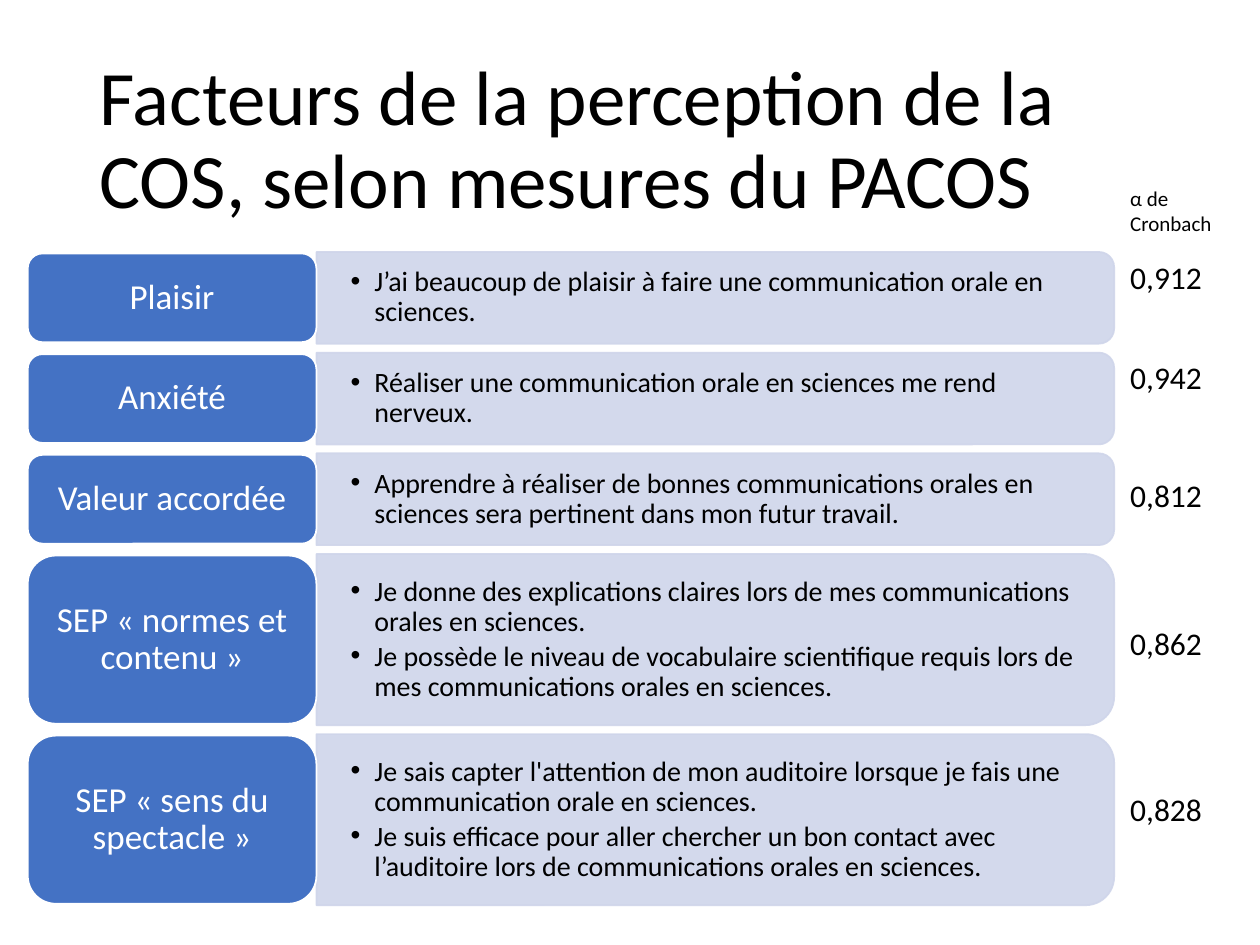
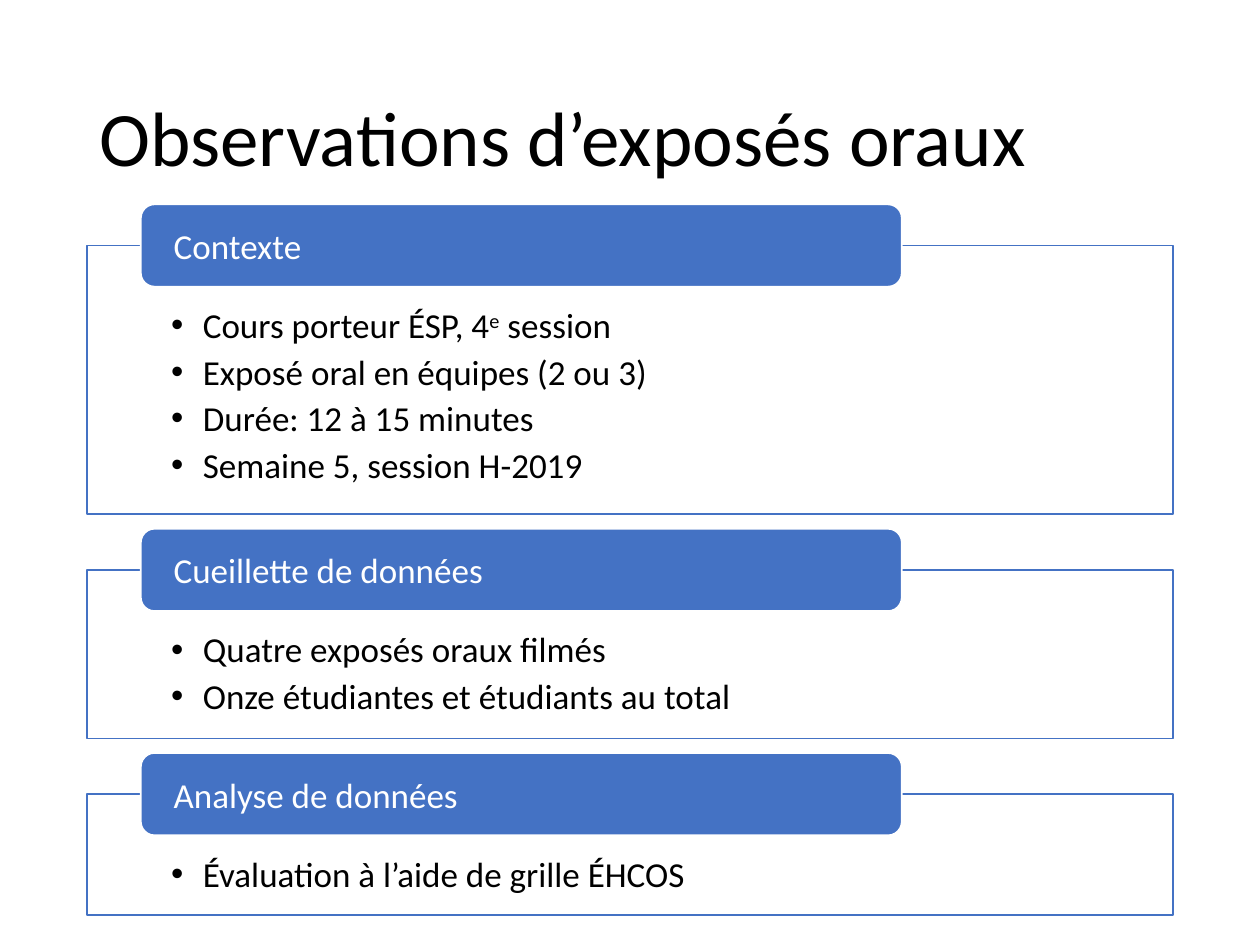
"""Builds two slides on oral communication in science: survey factors and observed talks."""
from dataclasses import dataclass

from lxml.etree import SubElement
from pptx import Presentation
from pptx.dml.color import RGBColor
from pptx.enum.shapes import MSO_SHAPE as SHAPE
from pptx.enum.text import MSO_ANCHOR as ANCHOR, MSO_AUTO_SIZE as AUTOSIZE, PP_ALIGN as ALIGN
from pptx.oxml.ns import qn
from pptx.util import Cm, Pt


@dataclass(frozen=True)
class Theme:
    font: str = "Calibri"
    black: str = "000000"
    white: str = "FFFFFF"
    blue: str = "4472C4"
    pale: str = "CFD5EA"
    title: int = 44
    large: int = 20
    value: int = 18
    small: int = 16
    caption: int = 12
    tight: float = 0.9
    after: float = 2.6


class Deck:
    def __init__(self, theme):
        self.t = theme
        self.prs = Presentation()
        self.prs.slide_width, self.prs.slide_height = Cm(25.4), Cm(19.05)
        self.s = None

    def slide(self, title):
        self.s = self.prs.slides.add_slide(self.prs.slide_layouts[5])
        sp = self.s.shapes.title
        sp.left, sp.top, sp.width, sp.height = Cm(1.75), Cm(1.02), Cm(21.9), Cm(3.68)
        sp.text_frame.auto_size = AUTOSIZE.NONE
        self.text(sp.text_frame, [title], self.t.title, self.t.black, spacing=self.t.tight)

    def text(self, tf, lines, size, color, align=ALIGN.LEFT, anchor=ANCHOR.MIDDLE,
             spacing=1.0, insets=None, indent=None):
        tf.word_wrap, tf.vertical_anchor = True, anchor
        if insets:
            tf.margin_left, tf.margin_top, tf.margin_right, tf.margin_bottom = map(Cm, insets)
        for i, line in enumerate(lines):
            p = tf.add_paragraph() if i else tf.paragraphs[0]
            p.alignment, p.line_spacing = align, spacing
            if indent:
                p.space_after = Pt(self.t.after)
                self.bullet(p, indent)
            for j, part in enumerate(line.split("^")):
                self.run(p, part, size, color, raised=j % 2)

    def run(self, p, text, size, color, raised=False):
        r = p.add_run()
        r.text = text
        r.font.name, r.font.size = self.t.font, Pt(size)
        r.font.color.rgb = RGBColor.from_string(color)
        if raised:
            r.font._element.set("baseline", "30000")

    def bullet(self, p, indent):
        pPr = p._p.get_or_add_pPr()
        pPr.set("marL", str(Cm(indent)))
        pPr.set("indent", str(-Cm(indent)))
        SubElement(pPr, qn("a:buFont")).set("typeface", "Arial")
        SubElement(pPr, qn("a:buChar")).set("char", "•")

    def shape(self, kind, box, fill, line, alpha=None):
        sp = self.s.shapes.add_shape(kind, *map(Cm, box))
        sp.shadow.inherit = False
        sp.fill.solid()
        sp.fill.fore_color.rgb = RGBColor.from_string(fill)
        sp.line.color.rgb = RGBColor.from_string(line)
        sp.line.width = Pt(1)
        if alpha:
            for clr in sp._element.spPr.iter(qn("a:srgbClr")):
                SubElement(clr, qn("a:alpha")).set("val", str(alpha * 1000))
        return sp

    def label(self, box, text, align, insets, spacing=1.0):
        sp = self.shape(SHAPE.ROUNDED_RECTANGLE, box, self.t.blue, self.t.white)
        self.text(sp.text_frame, [text], self.t.large, self.t.white, align,
                  spacing=spacing, insets=insets)

    def panel(self, x, y, w, h, lines):
        side = (x + (w - h) / 2, y + (h - w) / 2, h, w)
        sp = self.shape(SHAPE.ROUND_2_SAME_RECTANGLE, side, self.t.pale, self.t.pale, 90)
        sp.rotation = 90
        tb = self.s.shapes.add_textbox(Cm(x), Cm(y), Cm(w - 0.12), Cm(h))
        self.text(tb.text_frame, lines, self.t.small, self.t.black, spacing=self.t.tight,
                  insets=(0.69, 0.36, 0.69, 0.36), indent=0.48)

    def frame(self, box, lines):
        sp = self.shape(SHAPE.RECTANGLE, box, self.t.white, self.t.blue)
        self.text(sp.text_frame, lines, self.t.large, self.t.black, anchor=ANCHOR.TOP,
                  insets=(1.7, 1.17, 1.7, 0.41), indent=0.64)

    def column(self, x, y, w, rows):
        total = sum(h for _, h in rows)
        table = self.s.shapes.add_table(len(rows), 1, Cm(x), Cm(y), Cm(w), Cm(total)).table
        table.first_row = table.horz_banding = False
        for i, (text, h) in enumerate(rows):
            table.rows[i].height = Cm(h)
            cell = table.cell(i, 0)
            cell.fill.background()
            cell.vertical_anchor = ANCHOR.TOP
            self.text(cell.text_frame, [text], self.t.value if i else self.t.caption,
                      self.t.black, anchor=None)


FACTORS = [
    ("Plaisir", ["J’ai beaucoup de plaisir à faire une communication orale en sciences."]),
    ("Anxiété", ["Réaliser une communication orale en sciences me rend nerveux."]),
    ("Valeur accordée", ["Apprendre à réaliser de bonnes communications orales en sciences "
                         "sera pertinent dans mon futur travail."]),
    ("SEP « normes et contenu »", [
        "Je donne des explications claires lors de mes communications orales en sciences.",
        "Je possède le niveau de vocabulaire scientifique requis lors de mes "
        "communications orales en sciences."]),
    ("SEP « sens du spectacle »", [
        "Je sais capter l'attention de mon auditoire lorsque je fais une "
        "communication orale en sciences.",
        "Je suis efficace pour aller chercher un bon contact avec l’auditoire lors de "
        "communications orales en sciences."]),
]
ALPHAS = [("α de Cronbach", 1.47), ("0,912", 2.03), ("0,942", 2.36),
          ("0,812", 3.0), ("0,862", 3.33), ("0,828", 2.64)]
SECTIONS = [
    ("Contexte", 5.42, ["Cours porteur ÉSP, 4^e^ session", "Exposé oral en équipes (2 ou 3)",
                        "Durée: 12 à 15 minutes", "Semaine 5, session H-2019"]),
    ("Cueillette de données", 3.4, ["Quatre exposés oraux filmés",
                                    "Onze étudiantes et étudiants au total"]),
    ("Analyse de données", 2.43, ["Évaluation à l’aide de grille ÉHCOS"]),
]


def factors(d):
    d.slide("Facteurs de la perception de la COS, selon mesures du PACOS")
    y = 5.08
    for name, items in FACTORS:
        h = 1.85 if len(items) == 1 else 3.45
        d.panel(6.38, y, 16.08, h, items)
        d.label((0.56, y + 0.03, 5.82, h - 0.06), name, ALIGN.CENTER,
                (0.2, 0.1, 0.2, 0.1), d.t.tight)
        y += h + 0.18
    d.column(22.53, 3.63, 2.31, ALPHAS)


def observations(d):
    d.slide("Observations d’exposés oraux")
    y = 4.95
    for name, h, items in SECTIONS:
        d.frame((1.75, y, 21.9, h), items)
        d.label((2.84, y - 0.83, 15.34, 1.66), name, ALIGN.LEFT, (0.58, 0, 0.58, 0))
        y += h + 1.12


def main():
    d = Deck(Theme())
    factors(d)
    observations(d)
    d.prs.save("out.pptx")


if __name__ == "__main__":
    main()
